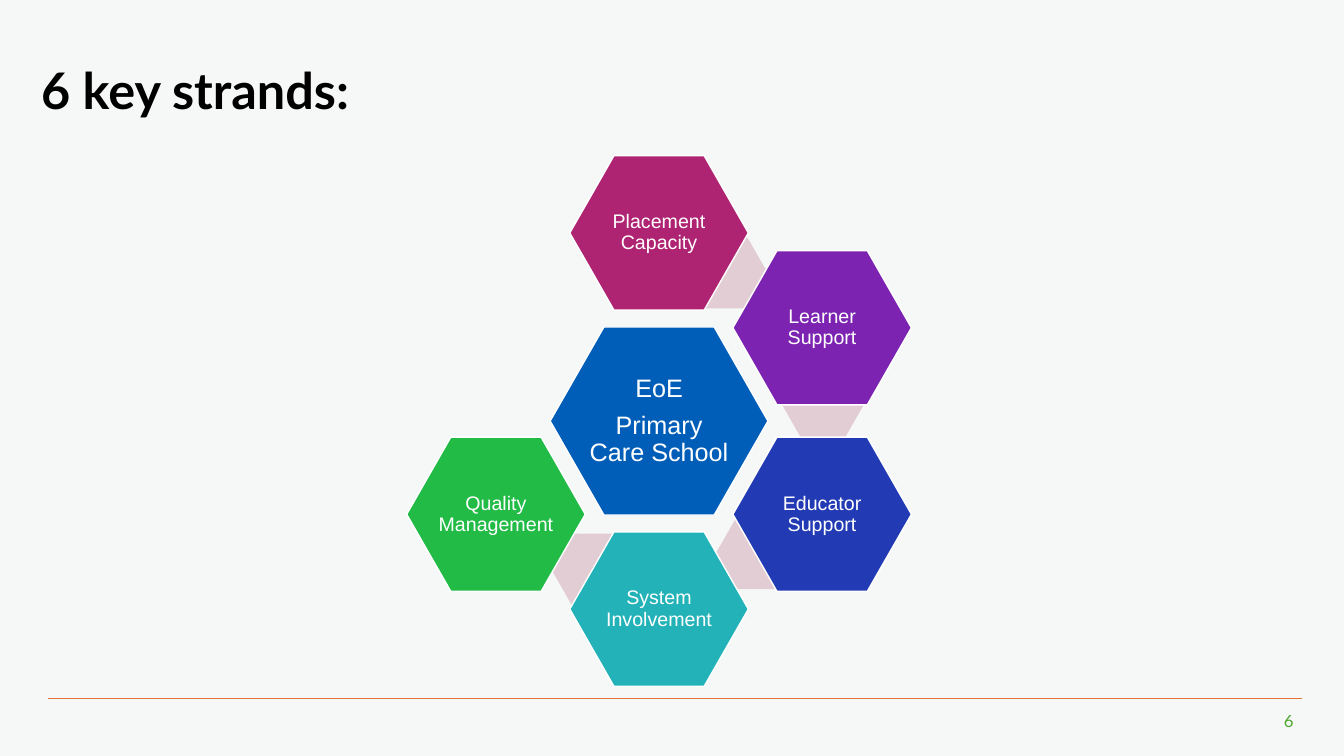
from pptx import Presentation
from pptx.dml.color import RGBColor
from pptx.enum.shapes import MSO_CONNECTOR, MSO_SHAPE
from pptx.enum.text import MSO_ANCHOR, PP_ALIGN
from pptx.oxml.ns import qn
from pptx.util import Cm, Pt
from lxml.etree import SubElement

PAPER = RGBColor(0xF6, 0xF8, 0xF8)
WHITE = RGBColor(0xFF, 0xFF, 0xFF)
BLACK = RGBColor(0x00, 0x00, 0x00)
ORANGE = RGBColor(0xE9, 0x71, 0x32)
LEAF = RGBColor(0x4E, 0xA7, 0x2E)
BLUE = RGBColor(0x00, 0x5E, 0xB8)
PINK = RGBColor(0xE3, 0xCD, 0xD5)
MAGENTA = RGBColor(0xAE, 0x24, 0x73)
PURPLE = RGBColor(0x7D, 0x23, 0xB1)
INDIGO = RGBColor(0x22, 0x3B, 0xB4)
TEAL = RGBColor(0x22, 0xB2, 0xB8)
GREEN = RGBColor(0x21, 0xBB, 0x46)

COLUMN = Cm(4.11)
NEAR_ROW, FAR_ROW = Cm(2.35), Cm(4.74)
HUB_SIZE = Cm(5.49), Cm(4.74)
STRAND_SIZE = Cm(4.5), Cm(3.89)
LINK_SIZE = Cm(2.06), Cm(1.78)

STRANDS = [
    ("Placement Capacity", MAGENTA, (0, -FAR_ROW), (Cm(1.71), Cm(-3.73))),
    ("Learner Support", PURPLE, (COLUMN, -NEAR_ROW), (Cm(4.13), Cm(-0.41))),
    ("Educator Support", INDIGO, (COLUMN, NEAR_ROW), (Cm(2.45), Cm(3.35))),
    ("System Involvement", TEAL, (0, FAR_ROW), (Cm(-1.69), Cm(3.73))),
    ("Quality Management", GREEN, (-COLUMN, NEAR_ROW), None),
]


def style(paragraph, font_name, size, color, bold=False):
    """Set the font of a whole paragraph."""
    font = paragraph.font
    font.name, font.size, font.bold = font_name, Pt(size), bold
    font.color.rgb = color


def set_margins(frame, margin):
    """Give a text frame the same margin on all sides."""
    frame.margin_left = frame.margin_right = margin
    frame.margin_top = frame.margin_bottom = margin


def add_hexagon(slide, center, size, color):
    """Draw a plain hexagon around a centre point."""
    (x, y), (width, height) = center, size
    hexagon = slide.shapes.add_shape(
        MSO_SHAPE.HEXAGON, x - width // 2, y - height // 2, width, height)
    hexagon.adjustments[0] = 0.286
    hexagon.shadow.inherit = False
    hexagon.fill.solid()
    hexagon.fill.fore_color.rgb = color
    hexagon.line.fill.background()
    return hexagon


def add_labelled_hexagon(slide, center, size, color, lines, font_size, margin):
    """Draw a white-edged hexagon with one paragraph per line."""
    hexagon = add_hexagon(slide, center, size, color)
    hexagon.line.color.rgb = WHITE
    hexagon.line.width = Pt(1)
    frame = hexagon.text_frame
    frame.word_wrap = True
    frame.vertical_anchor = MSO_ANCHOR.MIDDLE
    set_margins(frame, margin)
    frame.text = "\n".join(lines)
    for index, paragraph in enumerate(frame.paragraphs):
        paragraph.alignment = PP_ALIGN.CENTER
        paragraph.line_spacing = 0.9
        if index:
            paragraph.space_before = Pt(7)
        style(paragraph, "Arial", font_size, WHITE)


def add_cluster(slide, left, top, width, height):
    """Place the hub in the middle of the box and the strands around it."""
    x, y = left + width // 2, top + height // 2
    add_labelled_hexagon(slide, (x, y), HUB_SIZE, BLUE,
                         ["EoE", "Primary Care School"], 18, Cm(0.08))
    for label, color, (dx, dy), link in STRANDS:
        if link:
            add_hexagon(slide, (x + link[0], y + link[1]), LINK_SIZE, PINK)
        add_labelled_hexagon(slide, (x + dx, y + dy), STRAND_SIZE, color,
                             [label], 14, Cm(0.03))


def add_heading(slide, left, top, width, height):
    """Write the heading into the box."""
    frame = slide.shapes.add_textbox(left, top, width, height).text_frame
    frame.word_wrap = True
    frame.vertical_anchor = MSO_ANCHOR.MIDDLE
    set_margins(frame, 0)
    heading = frame.paragraphs[0]
    heading.text = "6 key strands:"
    heading.line_spacing = 0.9
    style(heading, "Lato", 36, BLACK, bold=True)


def add_footer(slide, left, top, width, height):
    """Draw the rule along the top of the box and the page number below it."""
    rule = slide.shapes.add_connector(
        MSO_CONNECTOR.STRAIGHT, left, top, left + width, top)
    rule.line.color.rgb = ORANGE
    rule.line.width = Pt(0.5)
    SubElement(rule.element.spPr, qn("a:effectLst"))
    number_width, gap = Cm(1.04), Cm(0.18)
    frame = slide.shapes.add_textbox(
        left + width + Cm(0.05) - number_width, top + gap,
        number_width, height - gap).text_frame
    frame.word_wrap = False
    number = frame.paragraphs[0]
    number.text = "6"
    number.alignment = PP_ALIGN.RIGHT
    style(number, "Lato", 12, LEAF)


def main():
    """Build the slide and save it."""
    deck = Presentation()
    deck.slide_width, deck.slide_height = Cm(33.87), Cm(19.05)
    slide = deck.slides.add_slide(deck.slide_layouts[6])
    slide.background.fill.solid()
    slide.background.fill.fore_color.rgb = PAPER
    add_footer(slide, Cm(1.2), Cm(17.6), Cm(31.6), Cm(0.95))
    add_heading(slide, Cm(1.04), Cm(1.14), Cm(31.67), Cm(2.41))
    add_cluster(slide, Cm(10.24), Cm(3.92), Cm(12.74), Cm(13.38))
    deck.save("out.pptx")


if __name__ == "__main__":
    main()
